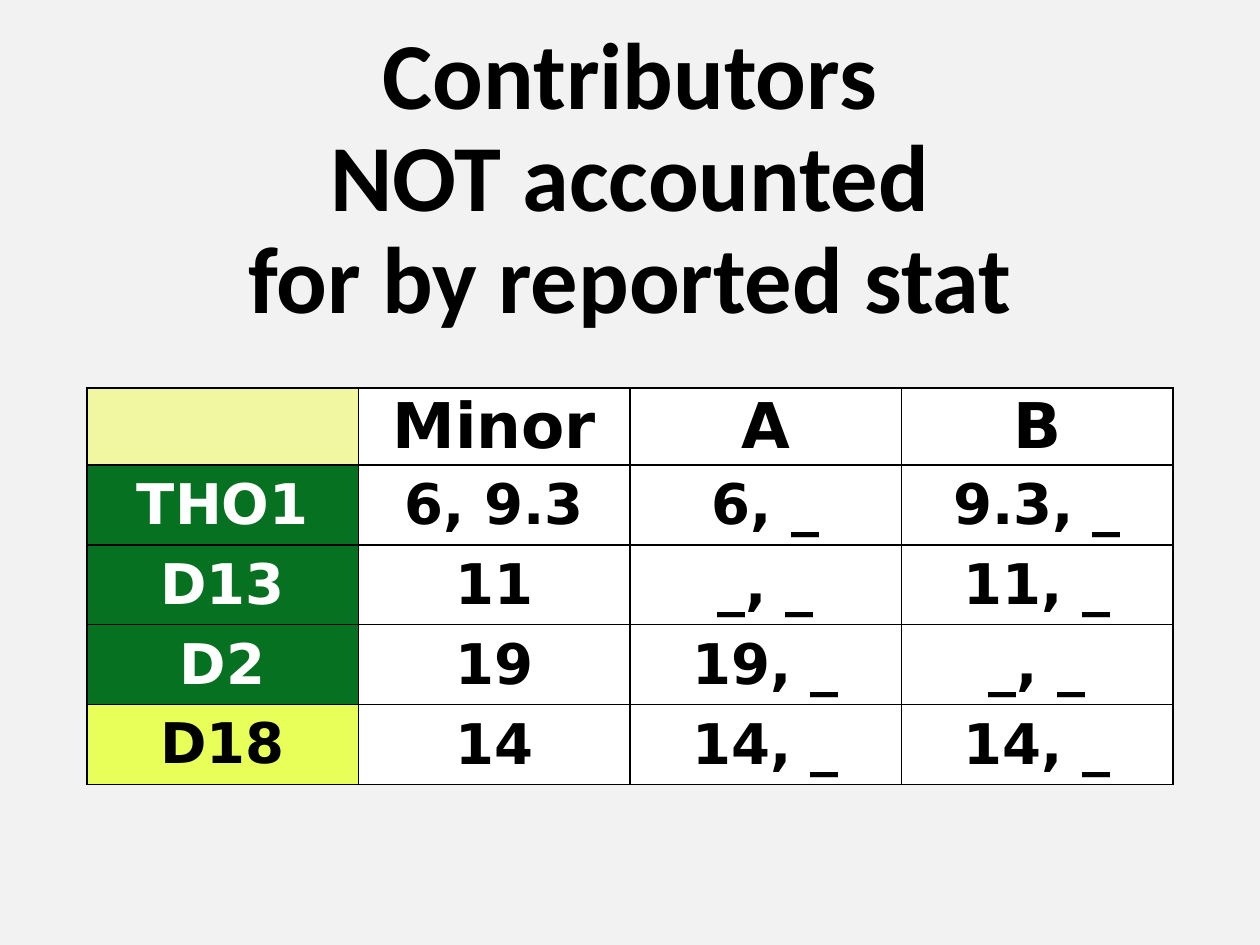
from lxml.etree import SubElement
from pptx import Presentation
from pptx.dml.color import RGBColor
from pptx.enum.text import MSO_ANCHOR, PP_ALIGN
from pptx.oxml.ns import qn
from pptx.util import Inches, Pt

# Grid
SLIDE_WIDTH, SLIDE_HEIGHT = 10, 7.5
MARGIN = 0.69
CONTENT_WIDTH = SLIDE_WIDTH - 2 * MARGIN
TITLE_TOP, TITLE_HEIGHT = 0.71, 1.45
TABLE_TOP = 3.08
HEADER_HEIGHT, ROW_HEIGHT = 0.59, 0.62

# Colours
BACKGROUND = "F2F2F2"
BLACK, WHITE = "000000", "FFFFFF"
CORNER, GREEN, YELLOW = "F0F7A0", "067120", "E8FF5A"

TITLE = "Contributors\nNOT accounted\nfor by reported stat"
HEADER = ["", "Minor", "A", "B"]
LOCI = [
    ["THO1", "6, 9.3", "6, _", "9.3, _"],
    ["D13", "11", "_, _", "11, _"],
    ["D2", "19", "19, _", "_, _"],
    ["D18", "14", "14, _", "14, _"],
]
LABEL_COLOURS = [(GREEN, WHITE)] * 3 + [(YELLOW, BLACK)]


def colour(hex_string):
    return RGBColor.from_string(hex_string)


def write_text(text_frame, text, font_name, size, text_colour):
    paragraph = text_frame.paragraphs[0]
    paragraph.text = text
    paragraph.alignment = PP_ALIGN.CENTER
    for run in paragraph.runs:
        run.font.name = font_name
        run.font.size = Pt(size)
        run.font.bold = True
        run.font.color.rgb = colour(text_colour)
    return paragraph


def add_title(slide):
    box = slide.shapes.add_textbox(Inches(MARGIN), Inches(TITLE_TOP),
                                   Inches(CONTENT_WIDTH), Inches(TITLE_HEIGHT))
    text_frame = box.text_frame
    text_frame.word_wrap = True
    text_frame.vertical_anchor = MSO_ANCHOR.MIDDLE
    paragraph = write_text(text_frame, TITLE, "Calibri", 54, BLACK)
    paragraph.line_spacing = 0.9


def add_borders(cell):
    properties = cell._tc.get_or_add_tcPr()
    for position, side in enumerate(("a:lnL", "a:lnR", "a:lnT", "a:lnB")):
        line = SubElement(properties, qn(side), w=str(Pt(1)))
        fill = SubElement(line, qn("a:solidFill"))
        SubElement(fill, qn("a:srgbClr"), val=BLACK)
        # Border lines come before the cell fill
        properties.insert(position, line)


def format_cell(cell, text, size, fill, text_colour=BLACK, top=0.01, bottom=0):
    cell.fill.solid()
    cell.fill.fore_color.rgb = colour(fill)
    cell.vertical_anchor = MSO_ANCHOR.MIDDLE
    cell.margin_left = cell.margin_right = Inches(0.01)
    cell.margin_top, cell.margin_bottom = Inches(top), Inches(bottom)
    add_borders(cell)
    write_text(cell.text_frame, text, "DejaVu Sans", size, text_colour)


def add_locus_table(slide):
    row_count, column_count = len(LOCI) + 1, len(HEADER)
    height = HEADER_HEIGHT + len(LOCI) * ROW_HEIGHT
    table = slide.shapes.add_table(
        row_count, column_count, Inches(MARGIN), Inches(TABLE_TOP),
        Inches(CONTENT_WIDTH), Inches(height)).table
    for row in table.rows:
        row.height = Inches(ROW_HEIGHT)
    table.rows[0].height = Inches(HEADER_HEIGHT)

    # Header row
    for column, text in enumerate(HEADER):
        format_cell(table.cell(0, column), text, 36, WHITE if text else CORNER)

    # One row per locus, with a coloured label
    for row, (values, label) in enumerate(zip(LOCI, LABEL_COLOURS), start=1):
        fill, text_colour = label
        format_cell(table.cell(row, 0), values[0], 32, fill, text_colour,
                    top=0.05, bottom=0.05)
        for column, text in enumerate(values[1:], start=1):
            format_cell(table.cell(row, column), text, 32, WHITE)


def main():
    presentation = Presentation()
    presentation.slide_width = Inches(SLIDE_WIDTH)
    presentation.slide_height = Inches(SLIDE_HEIGHT)
    slide = presentation.slides.add_slide(presentation.slide_layouts[6])
    slide.background.fill.solid()
    slide.background.fill.fore_color.rgb = colour(BACKGROUND)
    add_title(slide)
    add_locus_table(slide)
    presentation.save("out.pptx")


if __name__ == "__main__":
    main()
